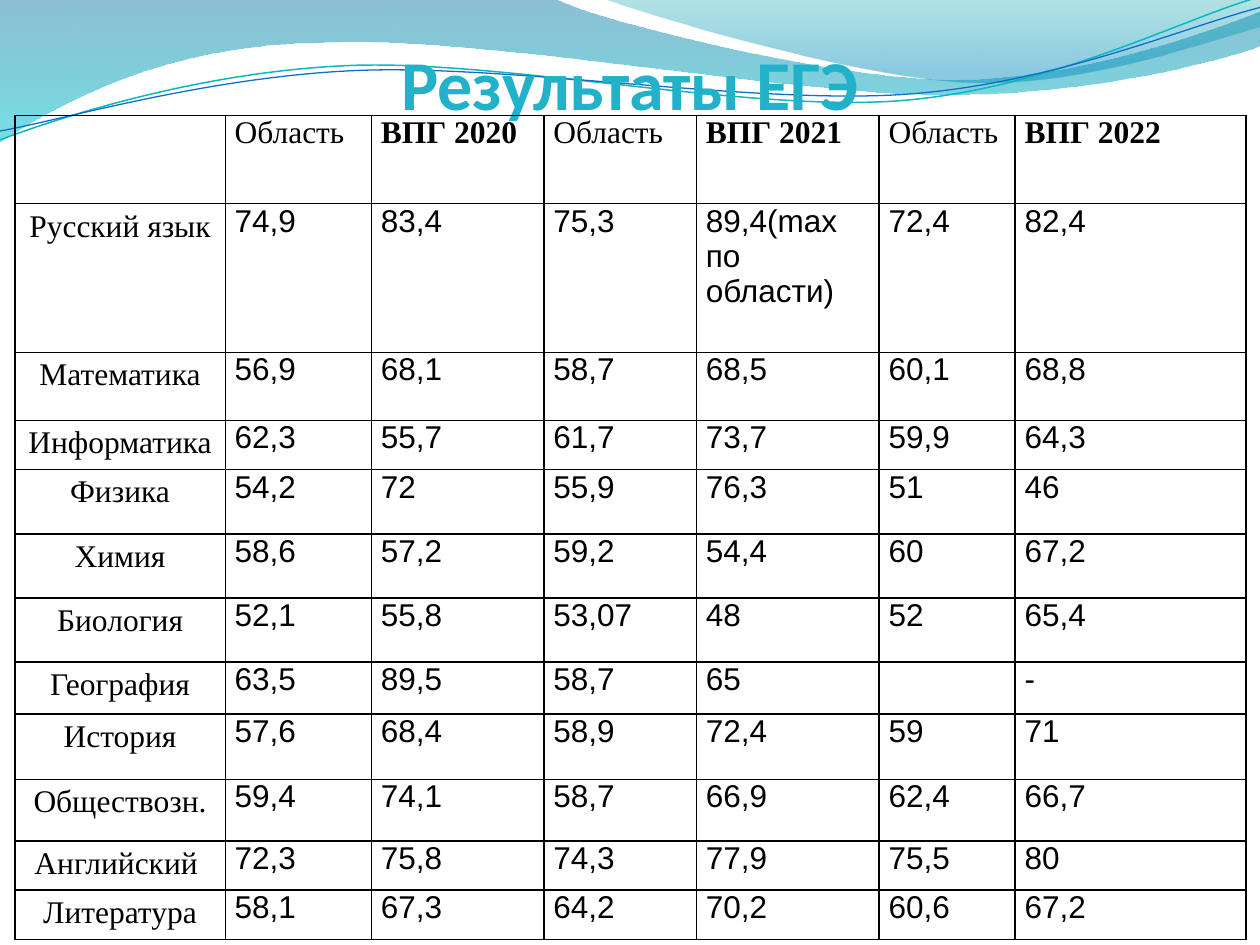
"""Build a slide with a table of exam results under a wave banner."""
from math import cos, radians, sin
from lxml import etree
from pptx import Presentation, util as u
from pptx.dml.color import RGBColor
from pptx.enum import text
from pptx.oxml.ns import qn

THEME = {
    "title": {"name": "Calibri", "size": u.Pt(40), "bold": True, "color": "21B2C9"},
    "label": {"name": "Times New Roman", "size": u.Pt(18), "bold": False, "color": "000000"},
    "strong": {"name": "Times New Roman", "size": u.Pt(18), "bold": True, "color": "000000"},
    "value": {"name": "Arial", "size": u.Pt(18), "bold": False, "color": "000000"},
    "rule": "000000",
}
TITLE = "Результаты ЕГЭ"
ROWS = [
    ["", "Область", "ВПГ 2020", "Область", "ВПГ 2021", "Область", "ВПГ 2022"],
    ["Русский язык", "74,9", "83,4", "75,3", "89,4(max\nпо области)", "72,4", "82,4"],
    ["Математика", "56,9", "68,1", "58,7", "68,5", "60,1", "68,8"],
    ["Информатика", "62,3", "55,7", "61,7", "73,7", "59,9", "64,3"],
    ["Физика", "54,2", "72", "55,9", "76,3", "51", "46"],
    ["Химия", "58,6", "57,2", "59,2", "54,4", "60", "67,2"],
    ["Биология", "52,1", "55,8", "53,07", "48", "52", "65,4"],
    ["География", "63,5", "89,5", "58,7", "65", "", "-"],
    ["История", "57,6", "68,4", "58,9", "72,4", "59", "71"],
    ["Обществозн.", "59,4", "74,1", "58,7", "66,9", "62,4", "66,7"],
    ["Английский ", "72,3", "75,8", "74,3", "77,9", "75,5", "80"],
    ["Литература", "58,1", "67,3", "64,2", "70,2", "60,6", "67,2"],
]
WIDTHS = [1.67, 1.16, 1.37, 1.21, 1.45, 1.08, 1.83]
HEIGHTS = [0.7, 1.18, 0.54, 0.39, 0.51, 0.51, 0.51, 0.41, 0.52, 0.49, 0.39, 0.39]
BANDS = [
    {"path": [(0, -0.01), (4.4, -0.01),
              (4.76, 0.17, 6.64, 0.63, 7.58, 0.63), (8.53, 0.63, 9.58, 0.26, 10, 0.09),
              (10.01, 0.36), (9.83, 0.44, 8.7, 0.76, 7.46, 0.75),
              (6.22, 0.75, 3.82, 0.28, 2.57, 0.34), (1.29, 0.35, 0.46, 0.83, -0.01, 1.13)],
     "stops": [(0, "0074A1", 45), (1, "00C6CF", 55)]},
    {"path": [(4.79, -0.01), (5.09, 0.11, 6.82, 0.62, 7.69, 0.65),
              (8.56, 0.69, 9.61, 0.32, 10, 0.21), (10, 0)],
     "stops": [(0, "00A1A9", 30), (0.8, "008BBF", 45)]},
]
TILT = 357.3
WAVES = [
    {"path": [(0, 1.11), (0.48, 0.93, 1.58, 0.57, 2.77, 0.52),
              (3.95, 0.47, 5.93, 0.89, 7.13, 0.8), (8.33, 0.71, 9.38, 0.15, 9.98, -0.02)],
     "mid": (4.99, 0.58), "color": "0AB8BF", "width": 0.85},
    {"path": [(0, 1.04), (0.47, 0.96, 1.64, 0.61, 2.83, 0.56),
              (4.03, 0.51, 5.97, 0.83, 7.17, 0.75), (8.36, 0.67, 9.41, 0.21, 10, 0.06)],
     "mid": (5, 0.59), "color": "0F6FC6", "width": 0.75},
]


def inch(n):
    return u.Cm(n * 2.54)


def rgb(code):
    return RGBColor.from_string(code)


def turn(path, mid, angle):
    s, c = sin(radians(angle)), cos(radians(angle))
    moved = []
    for part in path:
        spots = [(x - mid[0], y - mid[1]) for x, y in zip(part[::2], part[1::2])]
        moved.append(tuple(n for x, y in spots
                           for n in (mid[0] + x * c - y * s, mid[1] + x * s + y * c)))
    return moved


def outline(slide, path, close):
    dots = [(inch(x), inch(y)) for part in path for x, y in zip(part[::2], part[1::2])]
    pen = slide.shapes.build_freeform(*dots[0], scale=1.0)
    pen.add_line_segments(dots[1:], close=close)
    shape = pen.convert_to_shape()
    shape.shadow.inherit = False
    legs = iter(list(shape.element.spPr.iter(qn("a:lnTo"))))
    for part in path[1:]:
        leg = next(legs)
        if len(part) == 6:
            leg.addprevious(bend := etree.Element(qn("a:cubicBezTo")))
            for item in (leg, next(legs), next(legs)):
                bend.append(item[0])
                item.getparent().remove(item)
    return shape


def add_band(slide, band):
    shape = outline(slide, band["path"], True)
    shape.line.fill.background()
    shape.fill.gradient()
    shape.fill.gradient_angle = 270
    for stop, (place, code, alpha) in zip(shape.fill.gradient_stops, band["stops"]):
        stop.position = place
        stop.color.rgb = rgb(code)
    tones = shape.element.spPr.iter(qn("a:srgbClr"))
    for tone, (place, code, alpha) in zip(tones, band["stops"]):
        etree.SubElement(tone, qn("a:alpha"), val=str(alpha * 1000))


def add_wave(slide, wave):
    shape = outline(slide, turn(wave["path"], wave["mid"], 360 - TILT), False)
    shape.rotation = TILT
    shape.fill.background()
    shape.line.color.rgb = rgb(wave["color"])
    shape.line.width = u.Pt(wave["width"])


def write(frame, words, style, **form):
    frame.text = words
    for para in frame.paragraphs:
        for key, val in form.items():
            setattr(para, key, val)
        for run in para.runs:
            for key, val in THEME[style].items():
                if key == "color":
                    run.font.color.rgb = rgb(val)
                else:
                    setattr(run.font, key, val)


def add_title(slide):
    box = slide.shapes.add_textbox(inch(0.5), inch(0.36), inch(9), inch(0.63))
    form = {"word_wrap": True, "vertical_anchor": text.MSO_ANCHOR.BOTTOM, "margin_left": 0,
            "margin_right": 0, "margin_top": inch(0.05), "margin_bottom": 0}
    for key, val in form.items():
        setattr(box.text_frame, key, val)
    write(box.text_frame, TITLE, "title", alignment=text.PP_ALIGN.CENTER)


def rule(cell):
    props = cell._tc.get_or_add_tcPr()
    for side in ("lnL", "lnR", "lnT", "lnB"):
        line = etree.SubElement(props, qn("a:" + side), w=str(u.Pt(1)))
        fill = etree.SubElement(line, qn("a:solidFill"))
        etree.SubElement(fill, qn("a:srgbClr"), val=THEME["rule"])


def add_grid(slide):
    grid = slide.shapes.add_table(len(ROWS), len(WIDTHS), u.Cm(0.3), u.Cm(2.33),
                                  inch(sum(WIDTHS)), inch(sum(HEIGHTS))).table
    grid.first_row = grid.horz_banding = False
    for col, wide in zip(grid.columns, WIDTHS):
        col.width = inch(wide)
    form = {"margin_left": u.Cm(0.19), "margin_right": u.Cm(0.19),
            "margin_top": 0, "margin_bottom": 0}
    for r, (row, high) in enumerate(zip(ROWS, HEIGHTS)):
        grid.rows[r].height = inch(high)
        for c, words in enumerate(row):
            cell = grid.cell(r, c)
            rule(cell)
            cell.fill.background()
            for key, val in form.items():
                setattr(cell, key, val)
            if r == 0:
                write(cell.text_frame, words, "label" if c % 2 else "strong")
            elif c == 0:
                write(cell.text_frame, words, "label",
                      alignment=text.PP_ALIGN.CENTER, line_spacing=1.15)
            else:
                write(cell.text_frame, words, "value")


def main():
    deck = Presentation()
    deck.slide_width, deck.slide_height = inch(10), inch(7.5)
    slide = deck.slides.add_slide(deck.slide_layouts[6])
    for band in BANDS:
        add_band(slide, band)
    for wave in WAVES:
        add_wave(slide, wave)
    add_title(slide)
    add_grid(slide)
    deck.save("out.pptx")


if __name__ == "__main__":
    main()
